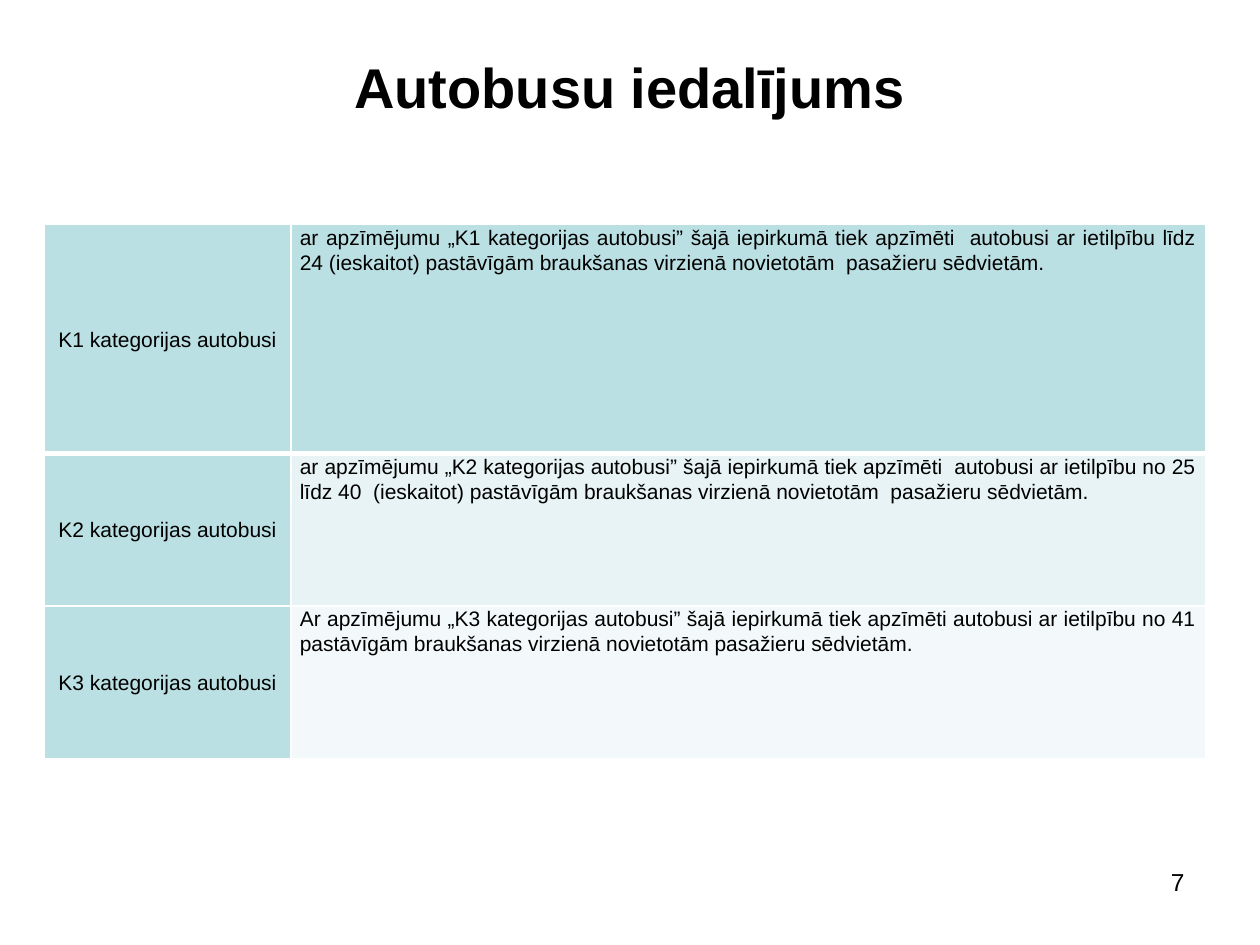
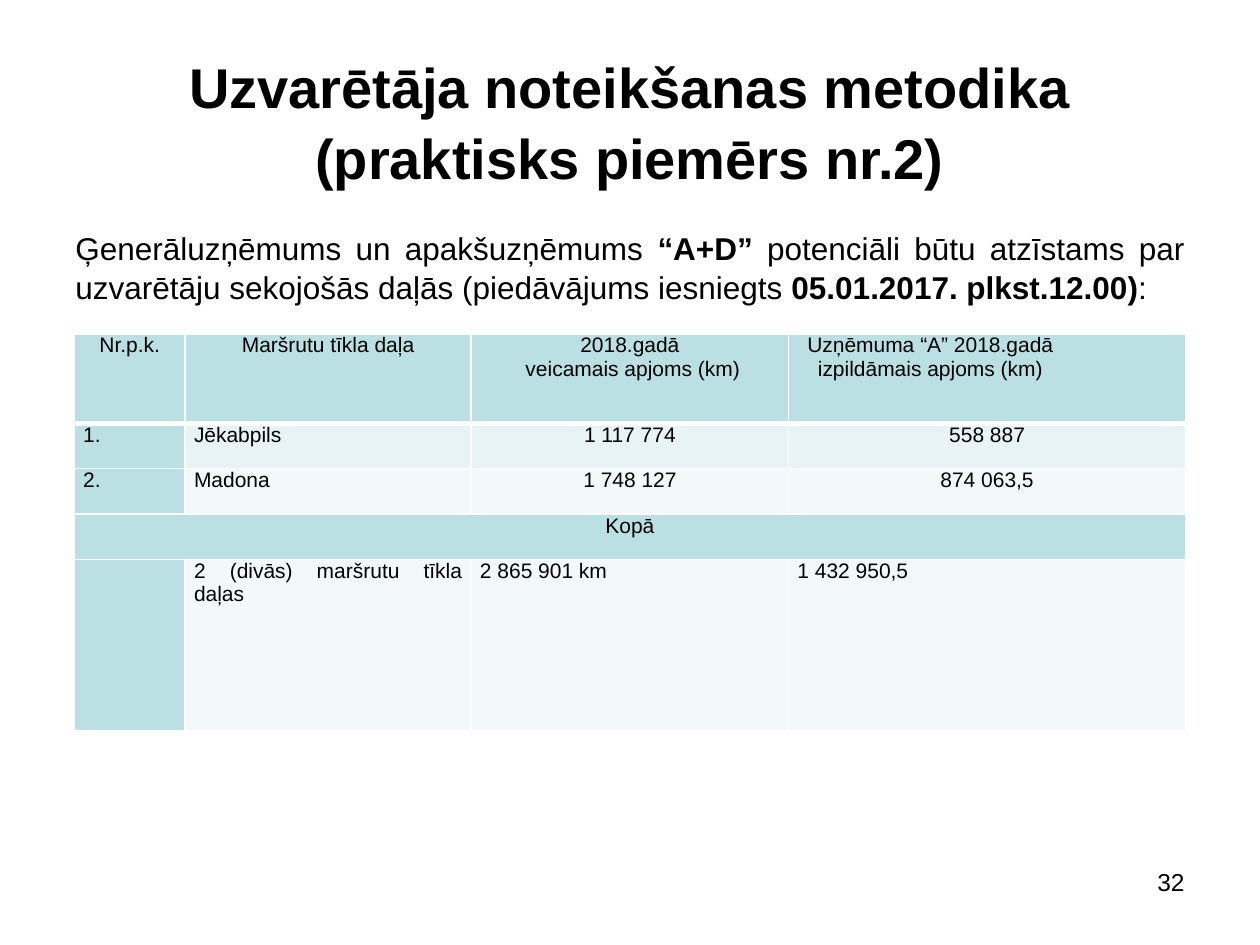
from lxml import etree
from pptx import Presentation
from pptx.dml.color import RGBColor
from pptx.enum import text
from pptx.oxml import ns
from pptx.util import Inches, Pt

FONT = "Arial"
COLORS = {"ink": "000000", "line": "FFFFFF", "head": "BBE0E3", "odd": "E7F3F4", "even": "F3F9FA"}
ALIGN = {"c": text.PP_ALIGN.CENTER, "j": text.PP_ALIGN.JUSTIFY, "r": text.PP_ALIGN.RIGHT}
TITLE_BOX = (0.5, 0.3, 9, 1.25)
BODY_BOX = (0.5, 1.75, 9, 4.95)
NUMBER_BOX = (7.17, 6.83, 2.33, 0.52)

SLIDES = [
    {
        "title": "Autobusu iedalījums",
        "number": "7",
        "table": {
            "at": (0.35, 1.78),
            "cols": (1.96, 7.26),
            "rows": (1.82, 1.21, 1.21),
            "align": ("cj", "cj", "cj"),
            "fills": ("head", "odd", "even"),
            "spacing": 1.07,
            "middle_first": True,
            "cells": [
                ("K1 kategorijas autobusi",
                 "ar apzīmējumu „K1 kategorijas autobusi” šajā iepirkumā tiek apzīmēti  autobusi ar ietilpību "
                 "līdz 24 (ieskaitot) pastāvīgām braukšanas virzienā novietotām  pasažieru sēdvietām."),
                ("K2 kategorijas autobusi",
                 "ar apzīmējumu „K2 kategorijas autobusi” šajā iepirkumā tiek apzīmēti  autobusi ar ietilpību "
                 "no 25 līdz 40  (ieskaitot) pastāvīgām braukšanas virzienā novietotām  pasažieru sēdvietām."),
                ("K3 kategorijas autobusi",
                 "Ar apzīmējumu „K3 kategorijas autobusi” šajā iepirkumā tiek apzīmēti autobusi ar ietilpību "
                 "no 41 pastāvīgām braukšanas virzienā novietotām pasažieru sēdvietām."),
            ],
        },
    },
    {
        "title": "Uzvarētāja noteikšanas metodika\v(praktisks piemērs nr.2)",
        "number": "32",
        "body": [
            ("Ģenerāluzņēmums un apakšuzņēmums ", False),
            ("“A+D” ", True),
            ("potenciāli būtu atzīstams par uzvarētāju sekojošās daļās (piedāvājums iesniegts ", False),
            ("05.01.2017. plkst.12.00)", True),
            (":", False),
        ],
        "table": {
            "at": (0.59, 2.65),
            "cols": (0.88, 2.27, 2.52, 3.15),
            "rows": (0.71, 0.36, 0.36, 0.36, 1.36),
            "align": ("cccc", "jjcc", "jjcc", "cccc", "jjjj"),
            "fills": ("head", "odd", "even", "head", "even"),
            "spacing": 1.0,
            "merged_row": 3,
            "right_inset": {(0, 3): 0.97},
            "cells": [
                ("Nr.p.k.", "Maršrutu tīkla daļa", "2018.gadā\n veicamais apjoms (km)",
                 "Uzņēmuma “A” 2018.gadā izpildāmais apjoms (km)"),
                ("1.", "Jēkabpils", "1 117 774", "558 887"),
                ("2.", "Madona", "1 748 127", "874 063,5"),
                ("Kopā", "", "", ""),
                ("", "2 (divās) maršrutu tīkla daļas", "2 865 901 km", "1 432 950,5"),
            ],
        },
    },
]


def color(name):
    return RGBColor.from_string(COLORS[name])


def style(tf, size, align, bold=False, spacing=1.0):
    for p in tf.paragraphs:
        p.alignment = ALIGN[align]
        p.line_spacing = spacing
        for r in p.runs:
            r.font.name, r.font.size = FONT, Pt(size)
            r.font.bold = bold
            r.font.color.rgb = color("ink")


def add_text(s, box, content, size, align, **look):
    tf = s.shapes.add_textbox(*map(Inches, box)).text_frame
    tf.word_wrap = True
    tf.text = content
    style(tf, size, align, **look)
    return tf


def set_borders(cell, bottom):
    tc_pr = cell._tc.get_or_add_tcPr()
    for i, (side, width) in enumerate((("L", 1), ("R", 1), ("T", 1), ("B", bottom))):
        ln = etree.Element(ns.qn(f"a:ln{side}"), w=str(Pt(width)))
        fill = etree.SubElement(ln, ns.qn("a:solidFill"))
        etree.SubElement(fill, ns.qn("a:srgbClr"), val=COLORS["line"])
        tc_pr.insert(i, ln)


def add_table(s, t):
    cols, rows = t["cols"], t["rows"]
    box = (*t["at"], sum(cols), sum(rows))
    table = s.shapes.add_table(len(rows), len(cols), *map(Inches, box)).table
    for col, width in zip(table.columns, cols):
        col.width = Inches(width)
    for row, height in zip(table.rows, rows):
        row.height = Inches(height)
    for i, values in enumerate(t["cells"]):
        for j, value in enumerate(values):
            cell = table.cell(i, j)
            cell.margin_left = Inches(0.07)
            cell.margin_right = Inches(t.get("right_inset", {}).get((i, j), 0.07))
            cell.margin_top = cell.margin_bottom = 0
            middle = j == 0 and t.get("middle_first")
            cell.vertical_anchor = text.MSO_ANCHOR.MIDDLE if middle else text.MSO_ANCHOR.TOP
            cell.text_frame.text = value
            style(cell.text_frame, 12, t["align"][i][j], spacing=t["spacing"])
            cell.fill.solid()
            cell.fill.fore_color.rgb = color("head" if j == 0 else t["fills"][i])
            set_borders(cell, 3 if i == 0 else 1)
    if "merged_row" in t:
        i = t["merged_row"]
        table.cell(i, 0).merge(table.cell(i, len(cols) - 1))


def add_body(s, parts):
    tf = add_text(s, BODY_BOX, "", 18, "j")
    p = tf.paragraphs[0]
    for part, _ in parts:
        p.add_run().text = part
    style(tf, 18, "j", spacing=1.05)
    for r, (_, bold) in zip(p.runs, parts):
        r.font.bold = bold


def main():
    prs = Presentation()
    prs.slide_width, prs.slide_height = Inches(10), Inches(7.5)
    for content in SLIDES:
        s = prs.slides.add_slide(prs.slide_layouts[6])
        title = add_text(s, TITLE_BOX, content["title"], 32, "c", bold=True, spacing=1.05)
        title.margin_top = Inches(0.09)
        if "body" in content:
            add_body(s, content["body"])
        add_table(s, content["table"])
        add_text(s, NUMBER_BOX, content["number"], 14, "r")
    prs.save("out.pptx")


if __name__ == "__main__":
    main()
